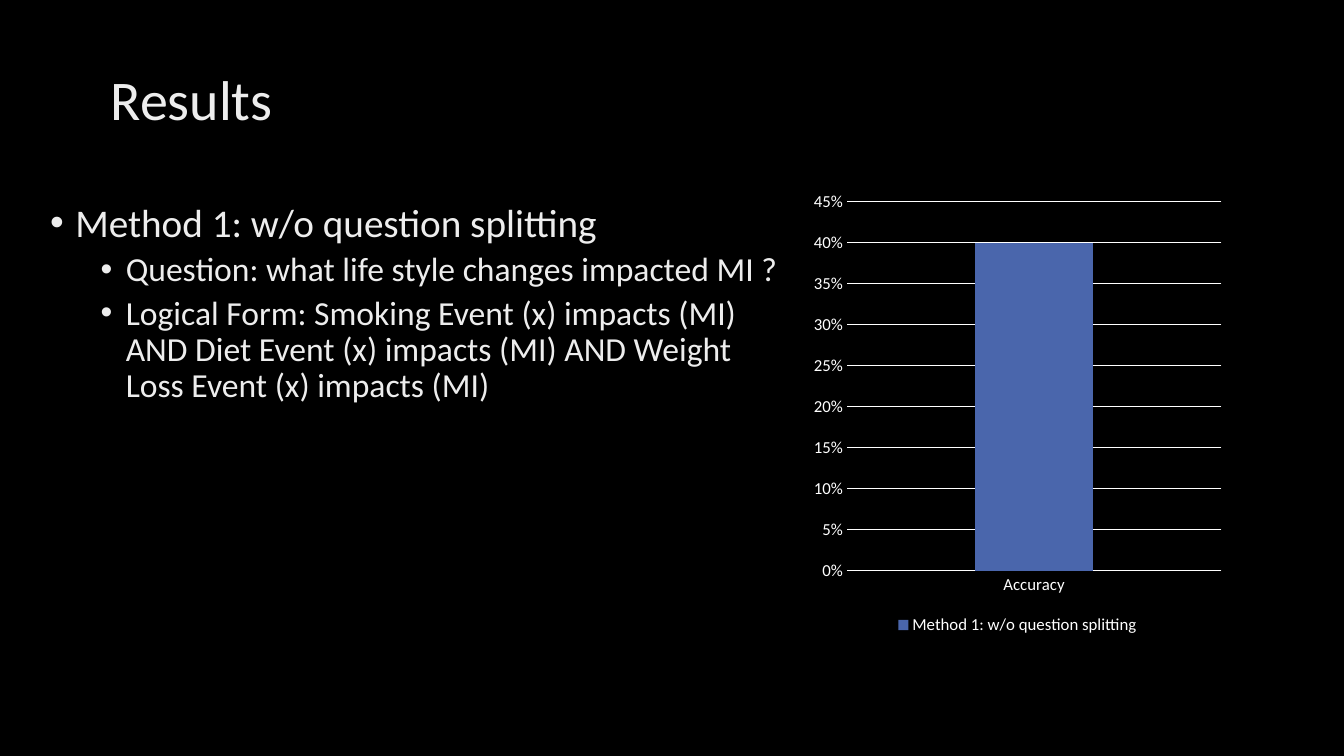
"""Builds the Results slide: a bulleted method summary beside an accuracy column chart."""
import pptx
import pptx.chart.data
import pptx.dml.color
import pptx.enum.chart
import pptx.enum.text
import pptx.oxml
import pptx.oxml.ns
import pptx.util
from lxml import etree

Pt = pptx.util.Pt
FONT = "Calibri"
BLACK, WHITE, SILVER, BLUE = "000000", "FFFFFF", "EDEDED", "4A66AC"
METHOD = "Method 1: w/o question splitting"

TITLE = "Results"
BULLETS = [
    (0, METHOD),
    (1, "Question: what life style changes impacted MI ?"),
    (1, "Logical Form: Smoking Event (x) impacts (MI) AND Diet Event (x) impacts (MI) "
        "AND Weight Loss Event (x) impacts (MI)"),
]
LEVELS = [
    {"size": 28, "indent": 18, "before": 10},
    {"size": 24, "indent": 54, "before": 5},
]
HANGING = 18
ACCURACY = {"Accuracy": 0.4}

SLIDE_SIZE = (960, 540)
TITLE_AREA = (72, 10.08, 816, 126)
BODY_AREA = (28.8, 141.84, 542.16, 443.52)
CHART_AREA = (575.28, 130.32, 303.12, 326.16)


def color(hex_text):
    return pptx.dml.color.RGBColor.from_string(hex_text)


def style_font(font, size, shade):
    font.name = FONT
    font.size = Pt(size)
    font.color.rgb = color(shade)


def style_line(line, shade):
    line.color.rgb = color(shade)
    line.width = Pt(0.75)


def add_box(page, area, anchor):
    frame = page.shapes.add_textbox(*map(Pt, area)).text_frame
    frame.word_wrap = True
    frame.vertical_anchor = anchor
    return frame


def write(para, text, size, shade=SILVER, before=0, indent=None, level=0):
    para.level = level
    para.line_spacing = 0.9
    para.space_before = Pt(before)
    if indent is not None:
        settings = para._p.get_or_add_pPr()
        settings.set("marL", str(Pt(indent)))
        settings.set("indent", str(-Pt(HANGING)))
        for tag, key, value in (("a:buFont", "typeface", "Arial"), ("a:buChar", "char", "•")):
            etree.SubElement(settings, pptx.oxml.ns.qn(tag)).set(key, value)
    span = para.add_run()
    span.text = text
    style_font(span.font, size, shade)


def add_bullets(page):
    frame = add_box(page, BODY_AREA, pptx.enum.text.MSO_ANCHOR.TOP)
    for index, (level, text) in enumerate(BULLETS):
        para = frame.add_paragraph() if index else frame.paragraphs[0]
        look = LEVELS[level]
        write(para, text, look["size"], before=look["before"] if index else 0,
              indent=look["indent"], level=level)


def add_accuracy_chart(page):
    data = pptx.chart.data.CategoryChartData(number_format="0%")
    data.categories = list(ACCURACY)
    data.add_series(METHOD, list(ACCURACY.values()))
    kinds = pptx.enum.chart
    chart = page.shapes.add_chart(
        kinds.XL_CHART_TYPE.COLUMN_CLUSTERED, *map(Pt, CHART_AREA), data).chart
    style_font(chart.font, 10, WHITE)
    chart.has_title = False
    chart.has_legend = True
    chart.legend.position = kinds.XL_LEGEND_POSITION.BOTTOM
    chart.legend.include_in_layout = False
    style_font(chart.legend.font, 12, WHITE)

    for axis in (chart.category_axis, chart.value_axis):
        axis.major_tick_mark = axis.minor_tick_mark = kinds.XL_TICK_MARK.NONE
        style_font(axis.tick_labels.font, 12, WHITE)
    style_line(chart.category_axis.format.line, WHITE)
    values = chart.value_axis
    values.format.line.fill.background()
    values.has_major_gridlines = True
    style_line(values.major_gridlines.format.line, WHITE)
    values.tick_labels.number_format = "0%"
    values.tick_labels.number_format_is_linked = False
    values.minimum_scale, values.maximum_scale, values.major_unit = 0, 0.45, 0.05

    plot = chart.plots[0]
    plot.gap_width, plot.overlap = 219, -27
    plot.vary_by_categories = False
    fill = plot.series[0].format.fill
    fill.solid()
    fill.fore_color.rgb = color(BLUE)


def main():
    deck = pptx.Presentation()
    deck.slide_width, deck.slide_height = map(Pt, SLIDE_SIZE)
    page = deck.slides.add_slide(deck.slide_layouts[6])
    page.background.fill.solid()
    page.background.fill.fore_color.rgb = color(BLACK)
    title = add_box(page, TITLE_AREA, pptx.enum.text.MSO_ANCHOR.MIDDLE)
    write(title.paragraphs[0], TITLE, 40)
    add_bullets(page)
    add_accuracy_chart(page)
    deck.save("out.pptx")


if __name__ == "__main__":
    main()
